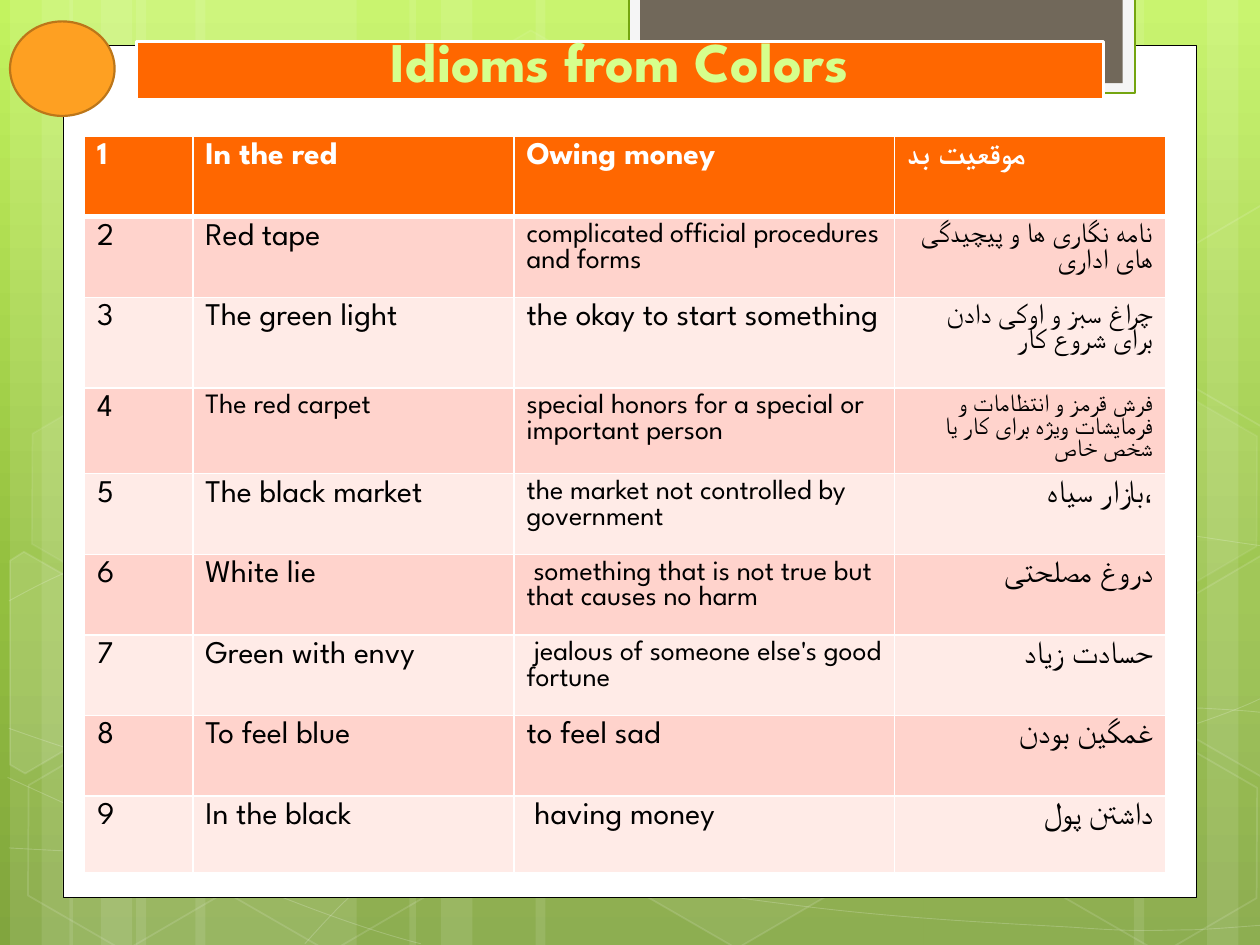
from copy import deepcopy
from dataclasses import dataclass
from typing import NamedTuple, Optional

from lxml import etree
from pptx import Presentation
from pptx.dml.color import RGBColor
from pptx.enum import shapes, text
from pptx.oxml.ns import qn
from pptx.util import Inches, Pt


@dataclass(frozen=True)
class Theme:
    font: str = "League Spartan"
    title_size: int = 32
    large: int = 18
    medium: int = 16
    small: int = 14
    white: str = "FFFFFF"
    black: str = "000000"
    title: str = "D6FF8C"
    accent: str = "FF6700"
    bands: tuple = ("FFEBE7", "FFD3CC")
    backdrop: tuple = ((0, "C3F35F"), (0.62, "93BF3F"), (1, "81A53E"))


class Stroke(NamedTuple):
    color: str
    width: float
    alpha: int = 100


class Hexagon(NamedTuple):
    left: float
    top: float
    fill_alpha: int
    line_alpha: int


class Idiom(NamedTuple):
    phrase: str
    meaning: str
    persian: str
    sizes: tuple = (18, 16, 18)


THEME = Theme()
PRESET = shapes.MSO_SHAPE
ALIGN = text.PP_ALIGN

BARS = [(1.08, 1.75), (0.08, 0.5), (0.33, 0.83), (1.55, 1.75), (0.55, 0.5), (0.8, 0.83),
        (7.33, 1.75), (9.58, 0.5), (9, 0.83), (4.25, 3.08), (3.25, 0.5), (3.5, 0.83)]

# Each curve: a start point, then cubic segments (two controls and an end) or straight ones (an end)
CURVES = [
    [(0.07, 6.73), (0.61, 6.76, 1.15, 6.79, 1.9, 6.78), (2.65, 6.77, 3.58, 6.75, 4.58, 6.65),
     (5.58, 6.55, 7, 6.36, 7.92, 6.17), (8.83, 5.98, 9.77, 5.68, 10.07, 5.51)],
    [(0.07, 4.77), (0.36, 4.61, 0.65, 4.46, 1.21, 4.31), (1.78, 4.16, 2.59, 3.94, 3.47, 3.87),
     (4.36, 3.8, 5.44, 3.79, 6.54, 3.87), (7.64, 3.95, 9.47, 4.26, 10.07, 4.34)],
    [(0.06, 6.17), (1.27, 6.72, 2.47, 7.27, 3.34, 7.49)],
    [(0.07, 5.78), (0.38, 5.89, 0.7, 6, 1.28, 6.16), (1.86, 6.31, 2.73, 6.56, 3.57, 6.73),
     (4.4, 6.9, 5.45, 7.08, 6.28, 7.18), (7.11, 7.29, 8, 7.33, 8.53, 7.36),
     (9.05, 7.4, 9.19, 7.38, 9.45, 7.38), (9.71, 7.37, 9.89, 7.35, 10.07, 7.34)],
    [(2.42, 7.49), (2.6, 7.29, 2.78, 7.09, 3.02, 6.91), (3.26, 6.73, 3.6, 6.53, 3.88, 6.39),
     (4.16, 6.25, 4.33, 6.19, 4.7, 6.09), (5.06, 5.99, 5.73, 5.85, 6.08, 5.78),
     (6.44, 5.71, 6.49, 5.71, 6.8, 5.69), (7.11, 5.66, 7.6, 5.63, 7.94, 5.62),
     (8.29, 5.61, 8.86, 5.62, 8.86, 5.62), (9.53, 5.62),
     (9.71, 5.63, 9.88, 5.64, 9.97, 5.65), (10.06, 5.66, 10.03, 5.65, 10.06, 5.66)],
]

HEXAGONS = [
    Hexagon(3.34, 0.36, 4, 8), Hexagon(4.97, 5.89, 6, 12), Hexagon(0.11, 5.91, 0, 12),
    Hexagon(0.14, 3.12, 7, 8), Hexagon(1.74, 5.92, 0, 12), Hexagon(7.53, 4.53, 10, 12),
    Hexagon(8.34, 5.93, 0, 12), Hexagon(8.34, 3.14, 7, 8),
]

# Hexagons cut by the slide edge: fill alpha and corners
CUT_HEXAGONS = [
    (10, [(0.08, 4.45), (0.19, 4.38), (0.96, 4.82), (0.95, 5.7), (0.2, 6.14), (0.08, 6.07)]),
    (4, [(9.26, 4.85), (10.01, 4.41), (10.09, 4.46), (10.09, 6.13), (10.02, 6.17), (9.26, 5.73)]),
    (0, [(9.26, 2.07), (10.01, 1.63), (10.1, 1.68), (10.09, 3.35), (10.02, 3.39), (9.26, 2.95)]),
]

COLUMNS = (0.86, 2.55, 3.02, 2.15)
ROWS = (0.64, 0.64, 0.72, 0.68, 0.64, 0.64, 0.64, 0.64, 0.61)
L, M, S = THEME.large, THEME.medium, THEME.small
IDIOMS = [
    Idiom("In the red", "Owing money", "موقعیت بد", (L, L, L)),
    Idiom("Red tape", "complicated official procedures and forms",
          "نامه نگاری ها و پیچیدگی های اداری", (L, M, M)),
    Idiom("The green light", "the okay to start something",
          "چراغ سبز و اوکی دادن برای شروع کار", (L, L, M)),
    Idiom("The red carpet", "special honors for a special or important person",
          "فرش قرمز و انتظامات و فرمایشات ویژه برای کار یا شخص خاص", (M, M, S)),
    Idiom("The black market", "the market not controlled by government", "بازار سیاه،"),
    Idiom("White lie", " something that is not true but that causes no harm", "دروغ مصلحتی"),
    Idiom("Green with envy", " jealous of someone else's good fortune", "حسادت زیاد"),
    Idiom("To feel blue", "to feel sad", "غمگین بودن", (L, L, L)),
    Idiom("In the black", " having money", "داشتن پول", (L, L, L)),
]


def rgb(color: str) -> RGBColor:
    return RGBColor.from_string(color)


def paint(fill, color: str, alpha: int, holder) -> None:
    """Solid fill; holder is the XML element that contains it."""
    fill.solid()
    fill.fore_color.rgb = rgb(color)
    if alpha < 100:
        tone = holder.find(f"{qn('a:solidFill')}/{qn('a:srgbClr')}")
        etree.SubElement(tone, qn("a:alpha"), val=str(alpha * 1000))


def style(shape, fill: Optional[str], stroke: Optional[Stroke], alpha: int = 100) -> None:
    shape.shadow.inherit = False
    properties = shape._element.spPr
    if fill and alpha:
        paint(shape.fill, fill, alpha, properties)
    else:
        shape.fill.background()
    if stroke:
        shape.line.width = Pt(stroke.width)
        paint(shape.line.fill, stroke.color, stroke.alpha, properties.find(qn("a:ln")))
    else:
        shape.line.fill.background()


def add_preset(page, kind, frame: tuple, fill: Optional[str],
               stroke: Optional[Stroke] = None, alpha: int = 100):
    shape = page.shapes.add_shape(kind, *map(Inches, frame))
    style(shape, fill, stroke, alpha)
    return shape


def add_outline(page, points: list, stroke: Stroke, closed: bool, alpha: int = 0):
    corners = [(Inches(x), Inches(y)) for x, y in points]
    builder = page.shapes.build_freeform(*corners[0], scale=1.0)
    builder.add_line_segments(corners[1:], close=closed)
    shape = builder.convert_to_shape()
    style(shape, THEME.white, stroke, alpha)
    return shape


def add_curve(page, curve: list, stroke: Stroke) -> None:
    """Outline through every point, then each group of three joined into a cubic segment."""
    points = [part[i:i + 2] for part in curve for i in range(0, len(part), 2)]
    shape = add_outline(page, points, stroke, closed=False)
    lines = iter(list(shape._element.iter(qn("a:lnTo"))))
    for part in curve[1:]:
        if len(part) == 2:
            next(lines)
            continue
        trio = [next(lines) for _ in range(3)]
        cubic = etree.Element(qn("a:cubicBezTo"))
        trio[0].addprevious(cubic)
        for line in trio:
            cubic.append(line[0])
            line.getparent().remove(line)


def write(frame, words: str, *, size: int, color: str, bold: bool = False, align=ALIGN.LEFT) -> None:
    para = frame.paragraphs[0]
    para.alignment = align
    span = para.add_run()
    span.text = words
    span.font.name, span.font.size, span.font.bold = THEME.font, Pt(size), bold
    span.font.color.rgb = rgb(color)
    etree.SubElement(span._r.rPr, qn("a:cs"), typeface=THEME.font)


def border(cell, bottom: float = 1) -> None:
    properties = cell._tc.get_or_add_tcPr()
    sides = (("a:lnL", 1), ("a:lnR", 1), ("a:lnT", 1), ("a:lnB", bottom))
    for index, (tag, width) in enumerate(sides):
        line = etree.Element(qn(tag), w=str(Pt(width)))
        solid = etree.SubElement(line, qn("a:solidFill"))
        etree.SubElement(solid, qn("a:srgbClr"), val=THEME.white)
        properties.insert(index, line)


def add_backdrop(page) -> None:
    fill = page.background.fill
    fill.gradient()
    fill.gradient_angle = 270
    stops = page.element.find(f".//{qn('a:gsLst')}")
    stops.append(deepcopy(stops[-1]))
    for stop, (position, color) in zip(fill.gradient_stops, THEME.backdrop):
        stop.position, stop.color.rgb = position, rgb(color)
    for left, width in BARS:
        add_preset(page, PRESET.RECTANGLE, (left, 0, width, 7.5), THEME.white, alpha=10)
    for curve in CURVES:
        add_curve(page, curve, Stroke(THEME.white, 0.5, 20))
    for item in HEXAGONS:
        shape = add_preset(page, PRESET.HEXAGON, (item.left, item.top, 1.75, 1.52), THEME.white,
                           Stroke(THEME.white, 1, item.line_alpha), item.fill_alpha)
        shape.adjustments[0], shape.rotation = 0.285, 30
    for alpha, corners in CUT_HEXAGONS:
        add_outline(page, corners, Stroke(THEME.white, 1, 12), closed=True, alpha=alpha)


def add_idioms(page) -> None:
    frame = map(Inches, (0.67, 1.08, sum(COLUMNS), sum(ROWS)))
    table = page.shapes.add_table(len(ROWS), len(COLUMNS), *frame).table
    for column, width in zip(table.columns, COLUMNS):
        column.width = Inches(width)
    for number, (row, height, idiom) in enumerate(zip(table.rows, ROWS, IDIOMS), 1):
        row.height = Inches(height)
        head = number == 1
        words = (str(number), idiom.phrase, idiom.meaning, idiom.persian)
        for index, (cell, entry, size) in enumerate(zip(row.cells, words, (L, *idiom.sizes))):
            cell.fill.solid()
            cell.fill.fore_color.rgb = rgb(THEME.accent if head else THEME.bands[(number + 1) % 2])
            border(cell, bottom=3 if head else 1)
            write(cell.text_frame, entry, size=size, bold=head,
                  color=THEME.white if head else THEME.black,
                  align=ALIGN.RIGHT if index == 3 and not head else ALIGN.LEFT)


def main() -> None:
    deck = Presentation()
    deck.slide_width, deck.slide_height = Inches(10), Inches(7.5)
    page = deck.slides.add_slide(deck.slide_layouts[6])
    add_backdrop(page)

    # White panel and the tab above it
    add_preset(page, PRESET.RECTANGLE, (0.5, 0.36, 9, 6.76), THEME.white, Stroke(THEME.black, 0.5))
    add_preset(page, PRESET.RECTANGLE, (4.99, -0.02, 4.02, 0.76), "F5F5F5", Stroke("74A510", 1.25))
    add_preset(page, PRESET.RECTANGLE, (5.08, -0.02, 3.83, 0.68), "71685A")

    # Title
    box = add_preset(page, PRESET.RECTANGLE, (1.08, 0.33, 7.68, 0.46), THEME.accent,
                     Stroke(THEME.white, 1.75))
    box.text_frame.word_wrap = True
    box.text_frame.vertical_anchor = text.MSO_ANCHOR.BOTTOM
    write(box.text_frame, "Idioms from Colors", size=THEME.title_size, color=THEME.title,
          bold=True, align=ALIGN.CENTER)

    add_idioms(page)
    add_preset(page, PRESET.OVAL, (0.08, 0.17, 0.83, 0.75), "FEA022", Stroke("BC7619", 1.25))
    deck.save("out.pptx")


if __name__ == "__main__":
    main()
